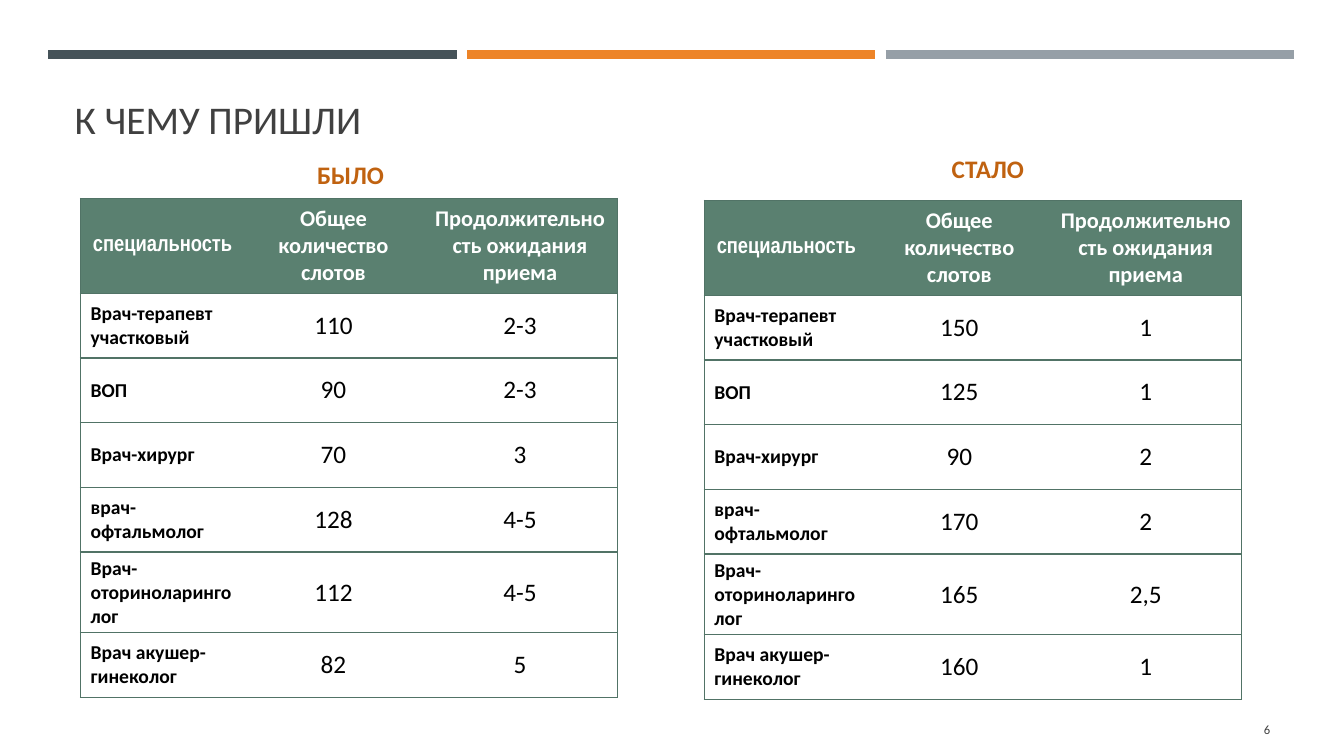
import pptx
import pptx.util
import pptx.dml.color
import pptx.enum.shapes
import pptx.enum.text
import pptx.oxml
import pptx.oxml.ns

Cm, Pt = pptx.util.Cm, pptx.util.Pt
ALIGN = pptx.enum.text.PP_ALIGN
ANCHOR = pptx.enum.text.MSO_ANCHOR
NS = pptx.oxml.ns.nsdecls("a")

TITLE = {"size": Pt(28)}
LABEL = {"size": Pt(18), "bold": True}
NUMBER = {"size": Pt(9)}
HEAD = {"size": Pt(16), "bold": True}
NAME = {"size": Pt(14), "bold": True}
VALUE = {"size": Pt(18), "bold": False}

HEADS = ["специальность", "Общее количество слотов",
         "Продолжительность ожидания приема"]
DOCTORS = ["Врач-терапевт участковый", "ВОП", "Врач-хирург",
           "врач-офтальмолог", "Врач-оториноларинголог",
           "Врач акушер-гинеколог"]
BEFORE = [("110", "2-3"), ("90", "2-3"), ("70", "3"),
          ("128", "4-5"), ("112", "4-5"), ("82", "5")]
AFTER = [("150", "1"), ("125", "1"), ("90", "2"),
         ("170", "2"), ("165", "2,5"), ("160", "1")]


def color(text):
    return pptx.dml.color.RGBColor.from_string(text)


class Page:
    font = "Calibri"
    dark = "404040"
    accent = "C06210"
    green = "5A8070"
    edge = "517366"

    def __init__(self, slide):
        self.slide = slide

    def fill(self, frame, text, look, ink, align=ALIGN.LEFT, font=None):
        """Put one styled run into a text frame."""
        par = frame.paragraphs[0]
        par.alignment = align
        run = par.add_run()
        run.text = text
        for key, val in {"name": font or self.font, **look}.items():
            setattr(run.font, key, val)
        run.font.color.rgb = color(ink)
        return par

    def text(self, box, text, look, ink, align=ALIGN.LEFT,
             anchor=ANCHOR.BOTTOM):
        frame = self.slide.shapes.add_textbox(*map(Cm, box)).text_frame
        frame.word_wrap = True
        frame.vertical_anchor = anchor
        return self.fill(frame, text, look, ink, align)

    def bar(self, left, top, width, ink):
        line = self.slide.shapes.add_connector(
            pptx.enum.shapes.MSO_CONNECTOR.STRAIGHT,
            Cm(left), Cm(top), Cm(left + width), Cm(top))
        line.line.color.rgb = color(ink)
        line.line.width = Pt(6.5)
        line._element.spPr.append(
            pptx.oxml.parse_xml(f"<a:effectLst {NS}/>"))

    def border(self, cell, sides):
        """Draw the given sides of a cell and clear the others."""
        props = cell._tc.get_or_add_tcPr()
        for spot, side in enumerate("LRTB"):
            fill = "<a:noFill/>"
            if side in sides:
                fill = (f'<a:solidFill><a:srgbClr val="{self.edge}"/>'
                        "</a:solidFill>")
            props.insert(spot, pptx.oxml.parse_xml(
                f'<a:ln{side} {NS} w="12700">{fill}</a:ln{side}>'))

    def table(self, left, top, widths, heights, rows):
        grid = self.slide.shapes.add_table(
            len(rows), len(widths), Cm(left), Cm(top),
            Cm(sum(widths)), Cm(sum(heights))).table
        for col, width in zip(grid.columns, widths):
            col.width = Cm(width)
        for row, height in zip(grid.rows, heights):
            row.height = Cm(height)
        last = len(widths) - 1
        for r, row in enumerate(rows):
            for c, text in enumerate(row):
                cell = grid.cell(r, c)
                cell.vertical_anchor = ANCHOR.MIDDLE
                align, ink, font = ALIGN.CENTER, "000000", None
                if r == 0:
                    cell.fill.solid()
                    cell.fill.fore_color.rgb = color(self.green)
                    look, ink = HEAD, "FFFFFF"
                    font = "Arial Narrow" if c == 0 else None
                else:
                    cell.fill.background()
                    look = VALUE if c else NAME
                    align = ALIGN.CENTER if c else ALIGN.LEFT
                self.fill(cell.text_frame, text, look, ink, align, font)
                self.border(cell, "TB" + "L" * (c == 0) + "R" * (c == last))


def main():
    deck = pptx.Presentation()
    deck.slide_width, deck.slide_height = Cm(33.87), Cm(19.05)
    page = Page(deck.slides.add_slide(deck.slide_layouts[6]))

    for i, ink in enumerate(["465359", "ED8428", "969FA7"]):
        page.bar(1.22 + 10.55 * i, 1.37, 10.29, ink)
    page.text((1.63, 2.03, 30.63, 1.68), "К ЧЕМУ ПРИШЛИ", TITLE, page.dark)
    page.text((29.34, 17.86, 2.92, 1.02), "6", NUMBER, page.dark,
              ALIGN.RIGHT, ANCHOR.MIDDLE)

    page.text((2.08, 3.81, 13.51, 1.09), "БЫЛО", LABEL, page.accent,
              ALIGN.CENTER)
    label = page.text((17.25, 3.81, 15.29, 0.94), "СТАЛО", LABEL,
                      page.accent, ALIGN.CENTER)
    label.line_spacing = 0.9

    heights = [2.39] + [1.63] * len(DOCTORS)
    for left, top, widths, values in [
            (2.03, 5.0, [4.14, 4.47, 4.93], BEFORE),
            (17.75, 5.05, [4.14, 4.57, 4.83], AFTER)]:
        rows = [HEADS] + [[d, *v] for d, v in zip(DOCTORS, values)]
        page.table(left, top, widths, heights, rows)

    deck.save("out.pptx")


if __name__ == "__main__":
    main()
